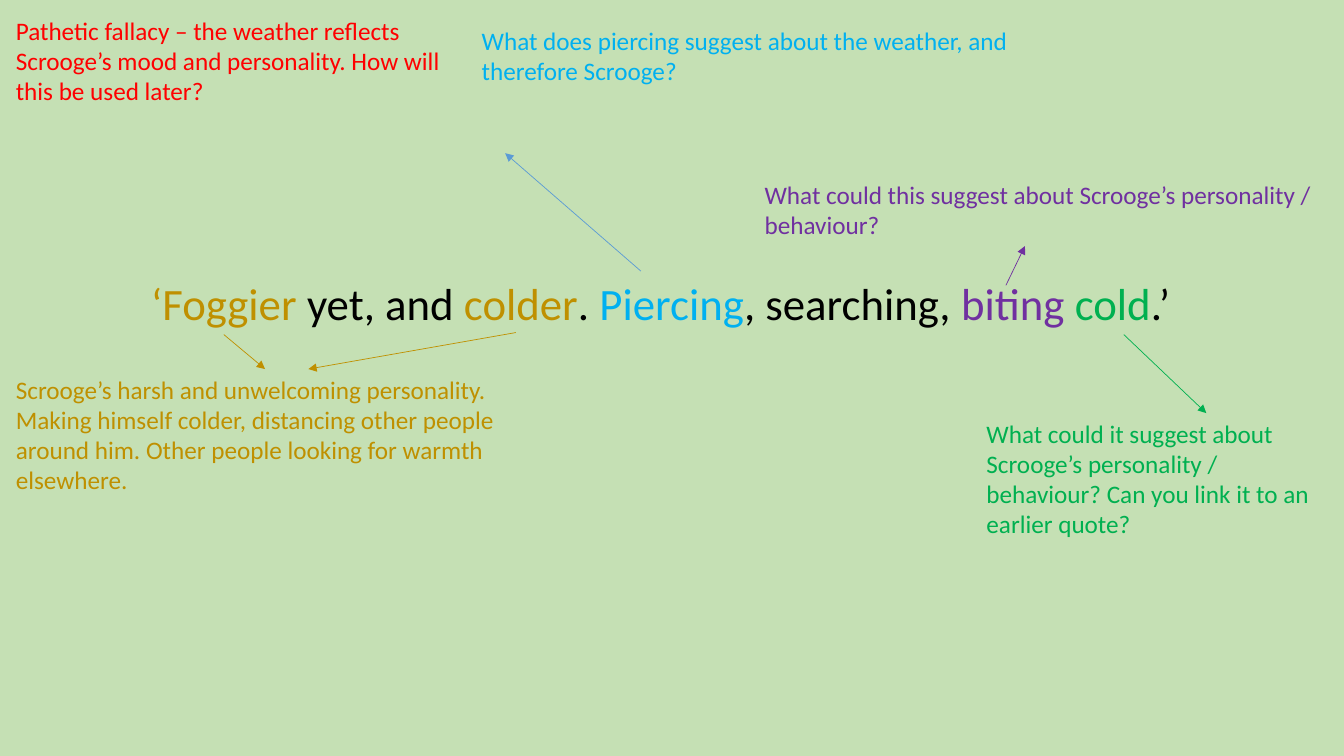
"""Build a slide of colour-coded notes around a quotation."""
from lxml import etree
from pptx import Presentation
from pptx.dml.color import RGBColor
from pptx.enum.shapes import MSO_CONNECTOR
from pptx.enum.text import MSO_AUTO_SIZE
from pptx.oxml.ns import qn
from pptx.util import Cm, Pt

STRAIGHT = MSO_CONNECTOR.STRAIGHT
GROW = MSO_AUTO_SIZE.SHAPE_TO_FIT_TEXT
GREEN, GOLD, SKY = "00B050", "BF9000", "00B0F0"
PURPLE, RED, BLUE, BLACK = "7030A0", "FF0000", "5B9BD5", "000000"

QUOTE = [
    ("‘Foggier ", GOLD), ("yet, and ", BLACK), ("colder", GOLD),
    (". ", BLACK), ("Piercing", SKY), (", searching, ", BLACK),
    ("biting ", PURPLE), ("cold", GREEN), (".’", BLACK),
]
NOTES = [
    ((0.15, 0.25, 11.4, 2.57), RED,
     "Pathetic fallacy – the weather reflects Scrooge’s mood and "
     "personality. How will this be used later?"),
    ((0.15, 9.3, 13.82, 3.33), GOLD,
     "Scrooge’s harsh and unwelcoming personality. Making himself colder, "
     "distancing other people around him. Other people looking for warmth "
     "elsewhere."),
    ((11.89, 0.51, 14.86, 1.8), SKY,
     "What does piercing suggest about the weather, and therefore Scrooge?"),
    ((19.02, 4.39, 14.86, 1.8), PURPLE,
     "What could this suggest about Scrooge’s personality / behaviour?"),
    ((24.61, 10.41, 9.25, 3.33), GREEN,
     "What could it suggest about Scrooge’s personality / behaviour? "
     "Can you link it to an earlier quote?"),
]
ARROWS = [
    ((16.15, 6.83, 12.73, 3.86), BLUE),
    ((13, 8.38, 7.77, 9.3), GOLD),
    ((28.32, 8.43, 30.4, 10.41), GREEN),
    ((25.35, 7.19, 25.83, 6.2), PURPLE),
    ((5.64, 8.43, 6.68, 9.3), GOLD),
]


def rgb(code):
    return RGBColor.from_string(code)


class Board:
    def __init__(self, slide, font="Calibri"):
        self.slide = slide
        self.font = font

    def ground(self, color):
        fill = self.slide.background.fill
        fill.solid()
        fill.fore_color.rgb = rgb(color)

    def text(self, box, parts, size, wrap=True):
        frame = self.slide.shapes.add_textbox(*map(Cm, box)).text_frame
        frame.word_wrap = wrap
        frame.auto_size = GROW
        for words, color in parts:
            run = frame.paragraphs[0].add_run()
            run.text = words
            run.font.name = self.font
            run.font.size = Pt(size)
            run.font.color.rgb = rgb(color)

    def arrow(self, ends, color):
        link = self.slide.shapes.add_connector(STRAIGHT, *map(Cm, ends))
        link.line.color.rgb = rgb(color)
        link.line.width = Pt(0.5)
        tip = etree.SubElement(link.line._get_or_add_ln(), qn("a:tailEnd"))
        tip.set("type", "triangle")
        etree.SubElement(link._element.spPr, qn("a:effectLst"))


def main():
    deck = Presentation()
    deck.slide_width, deck.slide_height = Cm(33.87), Cm(19.05)
    board = Board(deck.slides.add_slide(deck.slide_layouts[6]))
    board.ground("C5E0B4")
    board.text((3.56, 6.83, 26.62, 1.63), QUOTE, 32, wrap=False)
    for box, color, words in NOTES:
        board.text(box, [(words, color)], 18)
    for ends, color in ARROWS:
        board.arrow(ends, color)
    deck.save("out.pptx")


if __name__ == "__main__":
    main()
